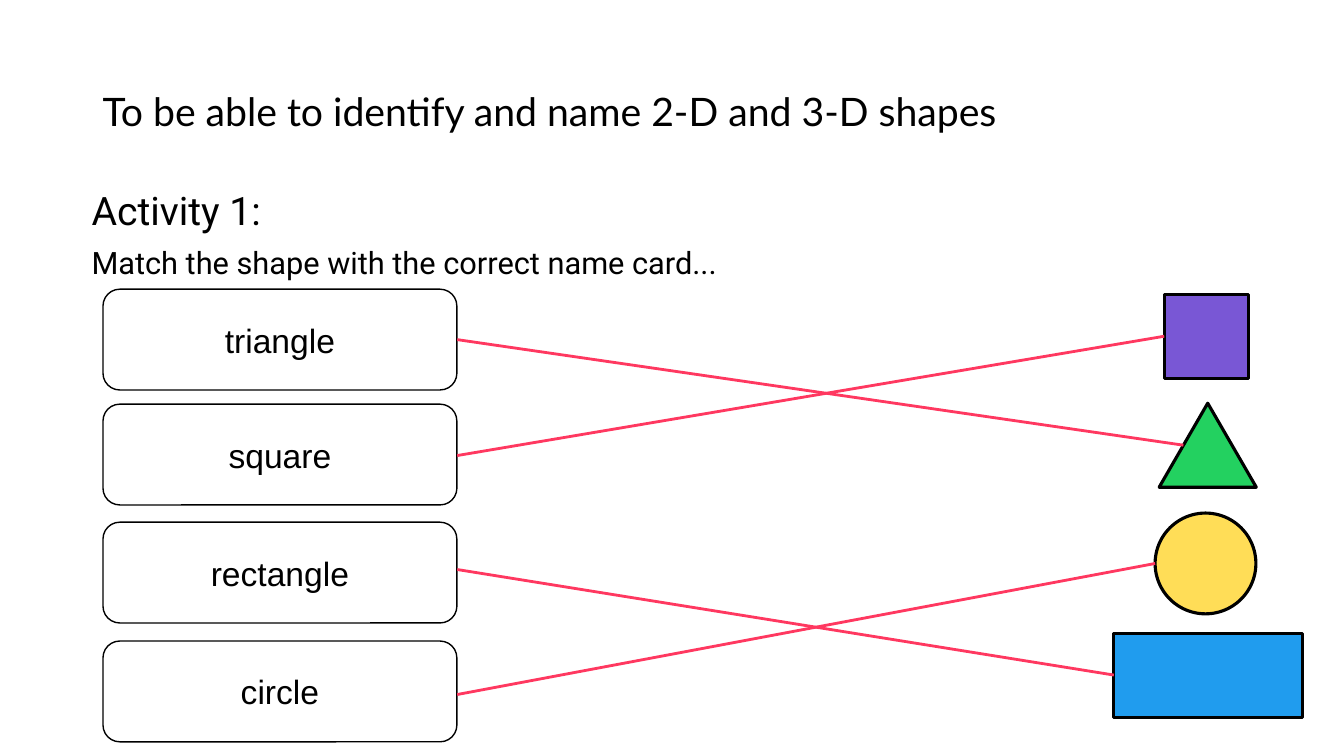
from pptx import Presentation
from pptx.dml.color import RGBColor
from pptx.enum.shapes import MSO_CONNECTOR as Connector, MSO_SHAPE as Shape
from pptx.enum.text import MSO_ANCHOR as Anchor, PP_ALIGN as Align
from pptx.oxml.ns import qn
from pptx.util import Pt
from lxml.etree import SubElement

BLACK = RGBColor(0x00, 0x00, 0x00)
WHITE = RGBColor(0xFF, 0xFF, 0xFF)
PURPLE = RGBColor(0x79, 0x57, 0xD5)
GREEN = RGBColor(0x23, 0xD1, 0x60)
YELLOW = RGBColor(0xFF, 0xDD, 0x57)
BLUE = RGBColor(0x20, 0x9C, 0xEE)
PINK = RGBColor(0xFF, 0x38, 0x60)

CARD_LEFT, CARD_WIDTH, CARD_HEIGHT = 73.6, 252.8, 72
CARD_RIGHT = 326.6


class MatchingSlide:
    title_font = "Lato"
    body_font = "Roboto"
    card_font = "Arial"

    def __init__(self, slide):
        self.shapes = slide.shapes

    def add_run(self, paragraph, words, font, size):
        run = paragraph.add_run()
        run.text = words
        run.font.name = font
        run.font.size = Pt(size)
        run.font.color.rgb = BLACK

    def text(self, left, top, width, height, lines, font, anchor=Anchor.TOP):
        box = self.shapes.add_textbox(Pt(left), Pt(top), Pt(width), Pt(height))
        frame = box.text_frame
        frame.word_wrap = True
        frame.vertical_anchor = anchor
        for index, (words, size) in enumerate(lines):
            paragraph = frame.add_paragraph() if index else frame.paragraphs[0]
            paragraph.line_spacing = 0.9
            paragraph.space_before = Pt(10 if index else 0)
            self.add_run(paragraph, words, font, size)

    def figure(self, kind, left, top, width, height, fill, outline=2.25):
        figure = self.shapes.add_shape(kind, Pt(left), Pt(top), Pt(width), Pt(height))
        figure.shadow.inherit = False
        figure.fill.solid()
        figure.fill.fore_color.rgb = fill
        figure.line.color.rgb = BLACK
        figure.line.width = Pt(outline)
        return figure

    def name_card(self, name, top):
        card = self.figure(Shape.ROUNDED_RECTANGLE, CARD_LEFT, top,
                           CARD_WIDTH, CARD_HEIGHT, WHITE, 1)
        card.text_frame.vertical_anchor = Anchor.MIDDLE
        paragraph = card.text_frame.paragraphs[0]
        paragraph.alignment = Align.CENTER
        self.add_run(paragraph, name, self.card_font, 24)

    def match(self, start_y, end_x, end_y):
        match = self.shapes.add_connector(
            Connector.STRAIGHT, Pt(CARD_RIGHT), Pt(start_y), Pt(end_x), Pt(end_y))
        match.line.color.rgb = PINK
        match.line.width = Pt(2)
        SubElement(match._element.spPr, qn("a:effectLst"))


def main():
    deck = Presentation()
    deck.slide_width, deck.slide_height = Pt(960), Pt(540)
    lesson = MatchingSlide(deck.slides.add_slide(deck.slide_layouts[6]))

    lesson.text(66.2, 28.8, 691.2, 104.4,
                [("To be able to identify and name 2-D and 3-D shapes", 28)],
                lesson.title_font, Anchor.MIDDLE)
    lesson.text(58.3, 133.2, 828, 342.7,
                [("Activity 1:", 28),
                 ("Match the shape with the correct name card...", 22)],
                lesson.body_font)

    for kind, left, top, width, height, fill in [
        (Shape.RECTANGLE, 831.6, 210.2, 60, 60, PURPLE),
        (Shape.ISOSCELES_TRIANGLE, 828, 288, 69.4, 60, GREEN),
        (Shape.OVAL, 825.1, 366.5, 72, 72, YELLOW),
        (Shape.RECTANGLE, 795.6, 452.2, 134.6, 60, BLUE),
    ]:
        lesson.figure(kind, left, top, width, height, fill)

    for name, card_top, start_y, end_x, end_y in [
        ("triangle", 206.6, 242.6, 845.3, 318),
        ("square", 288.7, 325.4, 831.6, 240.2),
        ("rectangle", 373, 406.8, 795.6, 482.2),
        ("circle", 457.9, 496.1, 825.1, 402.5),
    ]:
        lesson.name_card(name, card_top)
        lesson.match(start_y, end_x, end_y)

    deck.save("out.pptx")


if __name__ == "__main__":
    main()
